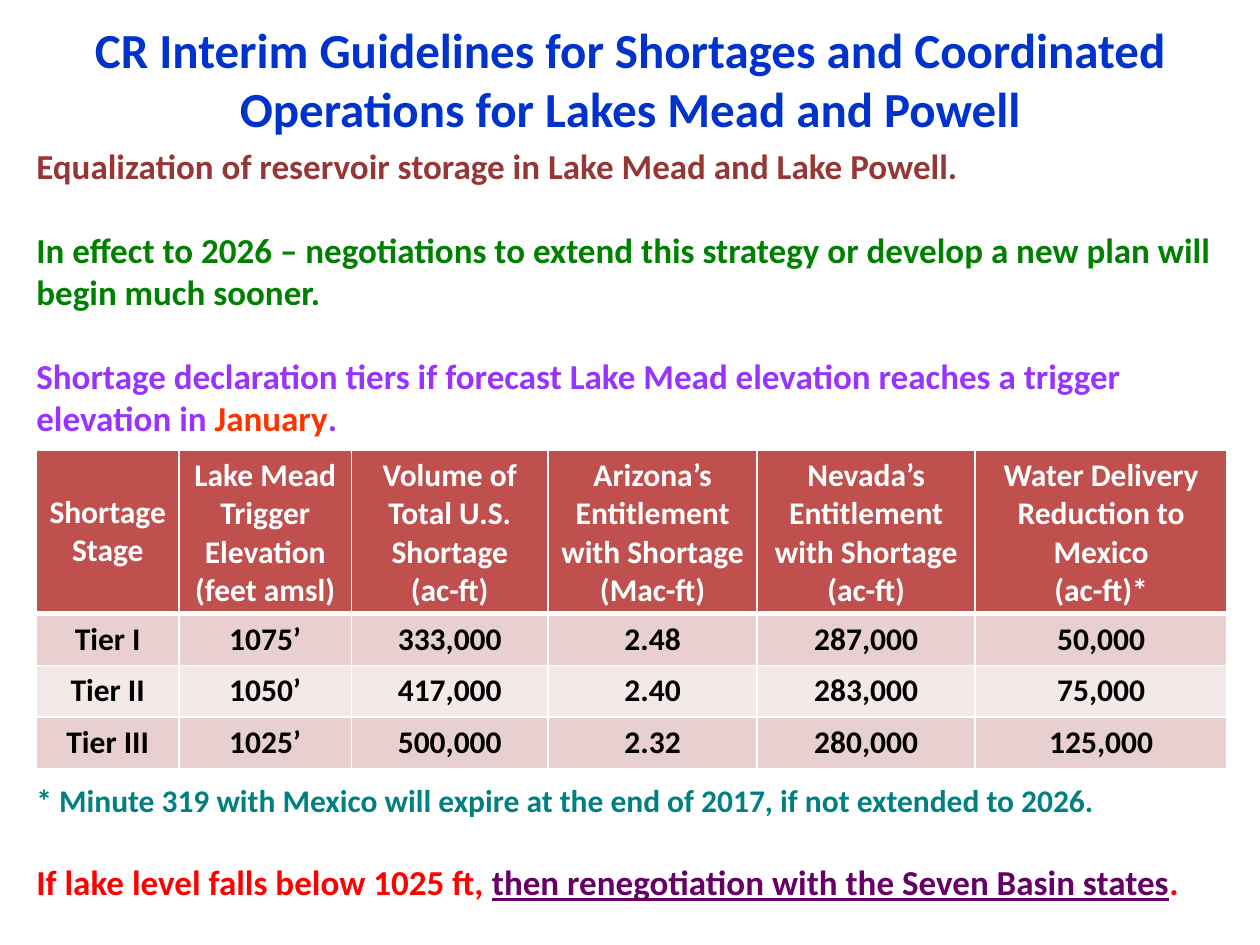
from lxml import etree
from pptx import Presentation
from pptx import util as u
from pptx.dml.color import RGBColor
from pptx.enum import text
from pptx.oxml.ns import qn

COLOURS = {
    "title": "0033CC", "brown": "953735", "green": "008000", "violet": "9933FF",
    "orange": "FF3300", "teal": "008080", "red": "FF0000", "purple": "660066",
    "white": "FFFFFF", "black": "000000",
    "header": "C0504D", "band_dark": "E8D0D0", "band_light": "F4E9E9",
}
COLUMN_WIDTHS = [1.13, 1.37, 1.56, 1.66, 1.73, 2]
HEADER_HEIGHT, ROW_HEIGHT = 1.29, 0.41
TIERS = [
    ["Shortage Stage", "Lake Mead Trigger Elevation (feet amsl)",
     "Volume of Total U.S. Shortage (ac-ft)",
     "Arizona’s Entitlement with Shortage (Mac-ft)",
     "Nevada’s Entitlement with Shortage\n(ac-ft)",
     "Water Delivery Reduction to Mexico\n(ac-ft)*"],
    ["Tier I", "1075’", "333,000", "2.48", "287,000", "50,000"],
    ["Tier II", "1050’", "417,000", "2.40", "283,000", "75,000"],
    ["Tier III", "1025’", "500,000", "2.32", "280,000", "125,000"],
]


def colour(name):
    return RGBColor.from_string(COLOURS[name])


class SlideBuilder:
    font_name = "Calibri"

    def __init__(self, slide):
        self.slide = slide

    def style(self, paragraph, size, centred=False):
        paragraph.font.name = self.font_name
        paragraph.font.size = u.Pt(size)
        paragraph.font.bold = True
        if centred:
            paragraph.alignment = text.PP_ALIGN.CENTER

    def text_box(self, box, paragraphs, centred=False, gap=24):
        """Each paragraph is (size, runs); each run is (words, colour, underlined)."""
        shape = self.slide.shapes.add_textbox(*map(u.Inches, box))
        frame = shape.text_frame
        frame.word_wrap = True
        if centred:
            frame.vertical_anchor = text.MSO_ANCHOR.MIDDLE
        for index, (size, runs) in enumerate(paragraphs):
            paragraph = frame.add_paragraph() if index else frame.paragraphs[0]
            self.style(paragraph, size, centred)
            if index:
                paragraph.space_before = u.Pt(gap)
            for words, name, *underlined in runs:
                run = paragraph.add_run()
                run.text = words
                run.font.color.rgb = colour(name)
                if underlined:
                    run.font.underline = True

    def border(self, cell, bottom_width):
        properties = cell._tc.get_or_add_tcPr()
        widths = {"a:lnL": 1, "a:lnR": 1, "a:lnT": 1, "a:lnB": bottom_width}
        for position, (tag, width) in enumerate(widths.items()):
            line = etree.Element(qn(tag), w=str(u.Pt(width)))
            fill = etree.SubElement(line, qn("a:solidFill"))
            etree.SubElement(fill, qn("a:srgbClr"), val=COLOURS["white"])
            properties.insert(position, line)

    def cell(self, cell, words, fill, font_colour, bottom_width):
        cell.text = words
        cell.vertical_anchor = text.MSO_ANCHOR.MIDDLE
        cell.fill.solid()
        cell.fill.fore_color.rgb = colour(fill)
        self.border(cell, bottom_width)
        for paragraph in cell.text_frame.paragraphs:
            self.style(paragraph, 18, centred=True)
            paragraph.font.color.rgb = colour(font_colour)

    def table(self, left, top, rows):
        height = HEADER_HEIGHT + ROW_HEIGHT * (len(rows) - 1)
        table = self.slide.shapes.add_table(
            len(rows), len(COLUMN_WIDTHS), u.Inches(left), u.Inches(top),
            u.Inches(sum(COLUMN_WIDTHS)), u.Inches(height)).table
        for column, width in zip(table.columns, COLUMN_WIDTHS):
            column.width = u.Inches(width)
        for index, row in enumerate(rows):
            table.rows[index].height = u.Inches(ROW_HEIGHT if index else HEADER_HEIGHT)
            if index == 0:
                look = ("header", "white", 3)
            else:
                look = ("band_dark" if index % 2 else "band_light", "black", 1)
            for column, words in enumerate(row):
                self.cell(table.cell(index, column), words, *look)


def main():
    presentation = Presentation()
    presentation.slide_width = u.Inches(10)
    presentation.slide_height = u.Inches(7.5)
    builder = SlideBuilder(presentation.slides.add_slide(presentation.slide_layouts[6]))

    builder.text_box((0.5, 0, 9, 1.25), [
        (28, [("CR Interim Guidelines for Shortages and Coordinated "
               "Operations for Lakes Mead and Powell", "title")]),
    ], centred=True)
    builder.text_box((0.19, 1.1, 9.65, 2.45), [
        (20, [("Equalization of reservoir storage in Lake Mead and Lake Powell.", "brown")]),
        (20, [("In effect to 2026 – negotiations to extend this strategy or "
               "develop a new plan will begin much sooner.", "green")]),
        (20, [("Shortage declaration tiers if forecast Lake Mead elevation "
               "reaches a trigger elevation in ", "violet"),
              ("January", "orange"), (".", "violet")]),
    ])
    builder.table(0.29, 3.57, TIERS)
    builder.text_box((0.19, 6.15, 9.65, 1.11), [
        (18, [("* Minute 319 with Mexico will expire at the end of 2017, "
               "if not extended to 2026.", "teal")]),
        (20, [("If lake level falls below 1025 ft, ", "red"),
              ("then renegotiation with the Seven Basin states", "purple", True),
              (".", "red")]),
    ])
    presentation.save("out.pptx")


if __name__ == "__main__":
    main()
